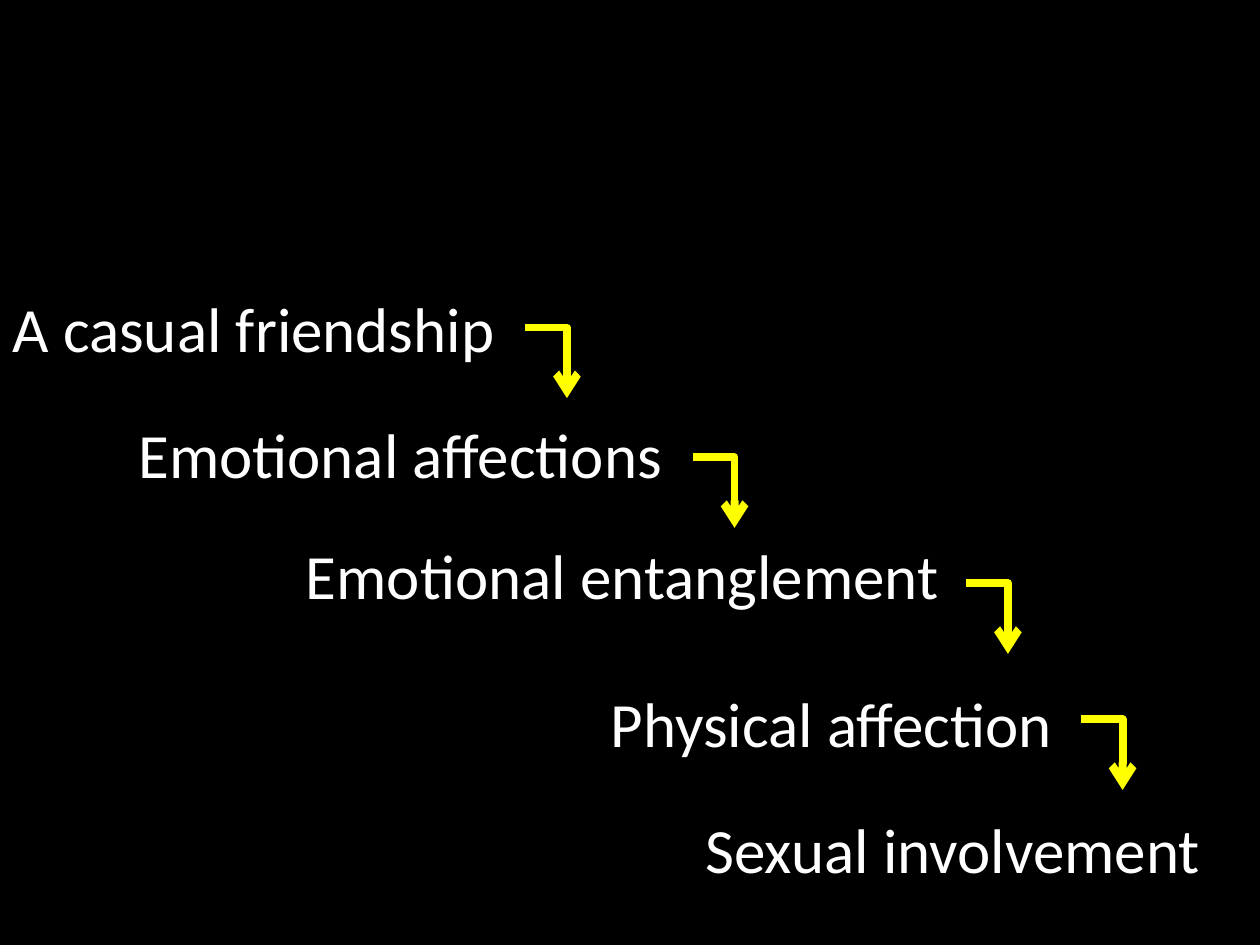
import dataclasses

import lxml.etree
import pptx
import pptx.dml.color
import pptx.enum.shapes
import pptx.enum.text
import pptx.oxml.ns
import pptx.slide
import pptx.util

Inches = pptx.util.Inches
qn = pptx.oxml.ns.qn

COLOURS = {"background": "000000", "text": "FFFFFF", "arrow": "FFFF00"}
FONT_NAME = "Calibri"
STEP_HEIGHT = 0.71
ARROW_WIDTH = 0.33
ARROW_HEIGHT = 0.56


@dataclasses.dataclass(frozen=True)
class Step:
    text: str
    left: float
    top: float
    width: float


@dataclasses.dataclass(frozen=True)
class Arrow:
    left: float
    top: float


STEPS = [
    Step("A casual friendship", 0, 2.25, 4.17),
    Step("Emotional affections", 1, 3.25, 4.42),
    Step("Emotional entanglement", 2.33, 4.21, 5.25),
    Step("Physical affection", 4.75, 5.38, 5.25),
    Step("Sexual involvement", 5.5, 6.38, 5.25),
]
ARROWS = [Arrow(4.17, 2.6), Arrow(5.5, 3.63), Arrow(8.58, 5.71), Arrow(7.67, 4.63)]


def colour(name: str) -> pptx.dml.color.RGBColor:
    return pptx.dml.color.RGBColor.from_string(COLOURS[name])


def draw_step(slide: pptx.slide.Slide, step: Step) -> None:
    shape = slide.shapes.add_textbox(
        Inches(step.left), Inches(step.top), Inches(step.width), Inches(STEP_HEIGHT)
    )
    shape.text_frame.word_wrap = True
    shape.text_frame.auto_size = pptx.enum.text.MSO_AUTO_SIZE.SHAPE_TO_FIT_TEXT
    run = shape.text_frame.paragraphs[0].add_run()
    run.text = step.text
    run.font.name = FONT_NAME
    run.font.size = pptx.util.Pt(36)
    run.font.color.rgb = colour("text")


def draw_arrow(slide: pptx.slide.Slide, arrow: Arrow) -> None:
    connector = slide.shapes.add_connector(
        pptx.enum.shapes.MSO_CONNECTOR.ELBOW,
        Inches(arrow.left),
        Inches(arrow.top),
        Inches(arrow.left + ARROW_WIDTH),
        Inches(arrow.top + ARROW_HEIGHT),
    )
    connector.line.width = pptx.util.Pt(4.5)
    connector.line.color.rgb = colour("arrow")
    properties = connector.element.find(qn("p:spPr"))
    properties.find(qn("a:prstGeom")).set("prst", "bentConnector2")
    line = properties.find(qn("a:ln"))
    lxml.etree.SubElement(line, qn("a:tailEnd")).set("type", "arrow")
    lxml.etree.SubElement(properties, qn("a:effectLst"))


def main() -> None:
    presentation = pptx.Presentation()
    presentation.slide_width = Inches(10)
    presentation.slide_height = Inches(7.5)
    slide = presentation.slides.add_slide(presentation.slide_layouts[6])
    slide.background.fill.solid()
    slide.background.fill.fore_color.rgb = colour("background")
    for step in STEPS:
        draw_step(slide, step)
    for arrow in ARROWS:
        draw_arrow(slide, arrow)
    presentation.save("out.pptx")


if __name__ == "__main__":
    main()
